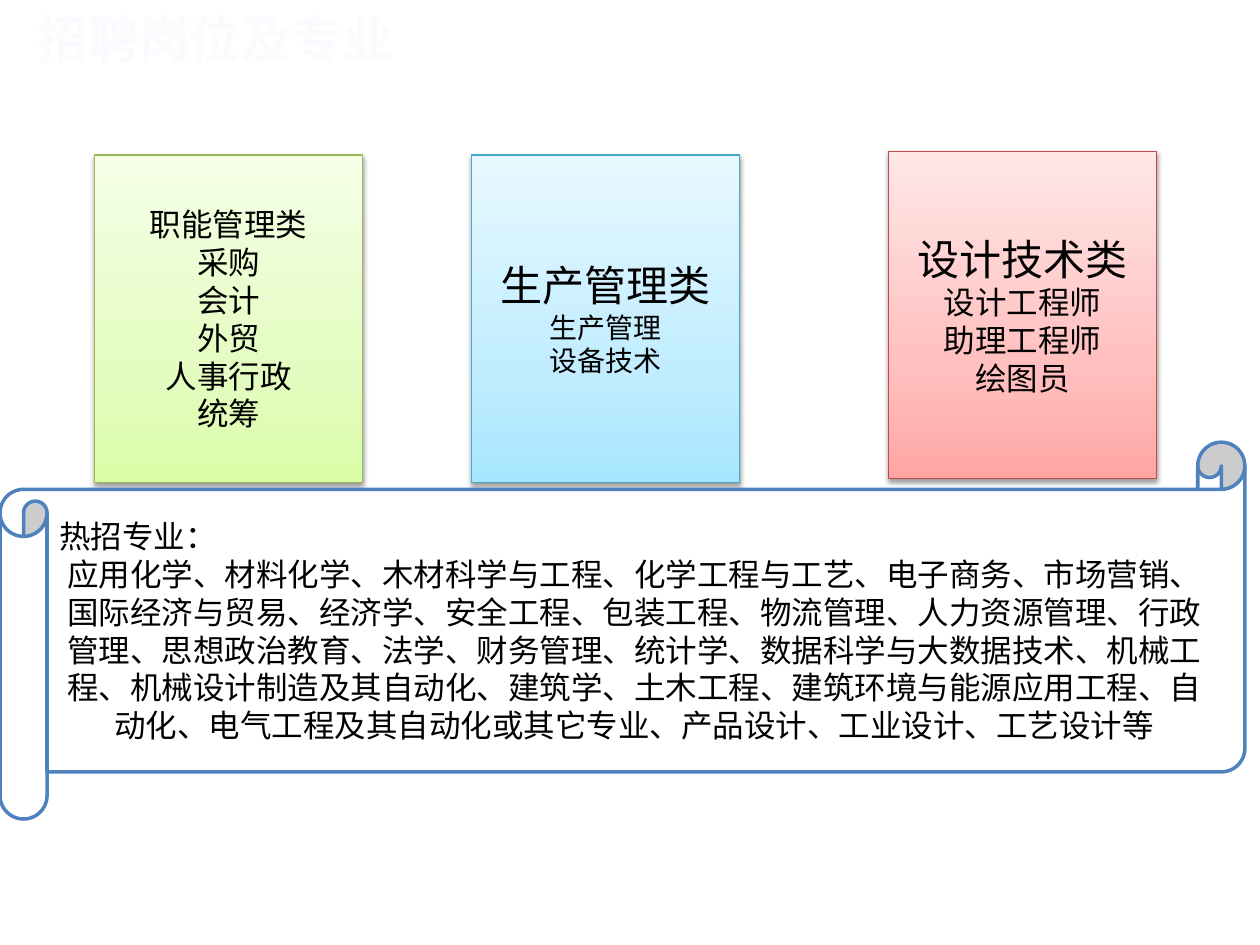
from copy import deepcopy
from dataclasses import dataclass

from lxml.etree import SubElement
from pptx import Presentation
from pptx.dml.color import RGBColor
from pptx.enum.shapes import MSO_SHAPE
from pptx.enum.text import MSO_ANCHOR, PP_ALIGN
from pptx.oxml.ns import qn
from pptx.shapes.autoshape import Shape
from pptx.slide import Slide
from pptx.text.text import TextFrame
from pptx.util import Inches, Pt

FONT = "Calibri"
BLACK = RGBColor(0x00, 0x00, 0x00)
WHITE = RGBColor(0xFF, 0xFF, 0xFF)
PALE = RGBColor(0xFA, 0xFB, 0xFE)
BLUE = RGBColor(0x4F, 0x81, 0xBD)
GREEN = RGBColor(0x98, 0xB9, 0x55)
TEAL = RGBColor(0x46, 0xAA, 0xC5)
RED = RGBColor(0xBF, 0x4C, 0x48)
LIMES = (RGBColor(0xDA, 0xFD, 0xA7), RGBColor(0xE4, 0xFC, 0xC2), RGBColor(0xF5, 0xFF, 0xE7))
SKIES = (RGBColor(0xA7, 0xE6, 0xFF), RGBColor(0xC1, 0xED, 0xFF), RGBColor(0xE7, 0xF8, 0xFF))
ROSES = (RGBColor(0xFF, 0xA6, 0xA5), RGBColor(0xFF, 0xC0, 0xBF), RGBColor(0xFF, 0xE7, 0xE7))
STOPS = (0, 0.35, 1)

MAJORS = (
    "应用化学、材料化学、木材科学与工程、化学工程与工艺、电子商务、市场营销、"
    "国际经济与贸易、经济学、安全工程、包装工程、物流管理、人力资源管理、行政管理、"
    "思想政治教育、法学、财务管理、统计学、数据科学与大数据技术、机械工程、"
    "机械设计制造及其自动化、建筑学、土木工程、建筑环境与能源应用工程、自动化、"
    "电气工程及其自动化或其它专业、产品设计、工业设计、工艺设计等"
)


@dataclass
class Line:
    text: str
    size: int = 18
    align: PP_ALIGN = PP_ALIGN.CENTER
    color: RGBColor = BLACK
    bold: bool = False


@dataclass
class Card:
    left: float
    top: float
    edge: RGBColor
    tints: tuple[RGBColor, ...]
    lines: list[Line]


CARDS = [
    Card(0.75, 1.23, GREEN, LIMES, [
        Line(job) for job in ("职能管理类", "采购", "会计", "外贸", "人事行政", "统筹")]),
    Card(3.74, 1.23, TEAL, SKIES, [
        Line("生产管理类", 24), Line("生产管理", 16), Line("设备技术", 16)]),
    Card(7.05, 1.2, RED, ROSES, [
        Line("设计技术类", 24), Line("设计工程师"), Line("助理工程师"), Line("绘图员")]),
]


def write(frame: TextFrame, lines: list[Line]) -> None:
    frame.word_wrap = True
    frame.vertical_anchor = MSO_ANCHOR.MIDDLE
    for i, line in enumerate(lines):
        para = frame.add_paragraph() if i else frame.paragraphs[0]
        para.text = line.text
        para.alignment = line.align
        font = para.font
        font.name, font.size, font.bold = FONT, Pt(line.size), line.bold
        font.color.rgb = line.color


def shade(shape: Shape, tints: tuple[RGBColor, ...]) -> None:
    fill = shape.fill
    fill.gradient()
    fill.gradient_angle = 90
    first, last = shape.element.spPr.findall(".//" + qn("a:gs"))
    last.addprevious(deepcopy(first))
    for stop, place, tint in zip(fill.gradient_stops, STOPS, tints):
        stop.position = place
        stop.color.rgb = tint


def drop(shape: Shape) -> None:
    effect = shape.element.spPr.find(qn("a:effectLst"))
    shadow = SubElement(effect, qn("a:outerShdw"), blurRad=str(Pt(3.1)),
                        dist=str(Pt(1.6)), dir="5400000", rotWithShape="0")
    color = SubElement(shadow, qn("a:srgbClr"), val=str(BLACK))
    SubElement(color, qn("a:alpha"), val="38000")


def draw(slide: Slide, kind: MSO_SHAPE, box: tuple[float, ...],
         edge: RGBColor, width: float, lines: list[Line]) -> Shape:
    shape = slide.shapes.add_shape(kind, *map(Inches, box))
    shape.shadow.inherit = False
    shape.line.color.rgb = edge
    shape.line.width = Pt(width)
    write(shape.text_frame, lines)
    return shape


def main() -> None:
    """Build the slide of job groups and wanted majors."""
    deck = Presentation()
    deck.slide_width, deck.slide_height = Inches(10), Inches(7.5)
    slide = deck.slides.add_slide(deck.slide_layouts[6])

    title = slide.shapes.add_textbox(*map(Inches, (0.2, 0, 4, 0.6)))
    write(title.text_frame, [Line("招聘岗位及专业", 29, PP_ALIGN.LEFT, PALE, True)])

    for card in CARDS:
        box = (card.left, card.top, 2.13, 2.6)
        shape = draw(slide, MSO_SHAPE.RECTANGLE, box, card.edge, 0.75, card.lines)
        shade(shape, card.tints)
        drop(shape)

    scroll = draw(slide, MSO_SHAPE.HORIZONTAL_SCROLL, (0, 3.51, 9.88, 2.99), BLUE, 2,
                  [Line("热招专业：", align=PP_ALIGN.LEFT), Line(MAJORS)])
    scroll.fill.solid()
    scroll.fill.fore_color.rgb = WHITE
    deck.save("out.pptx")


if __name__ == "__main__":
    main()
